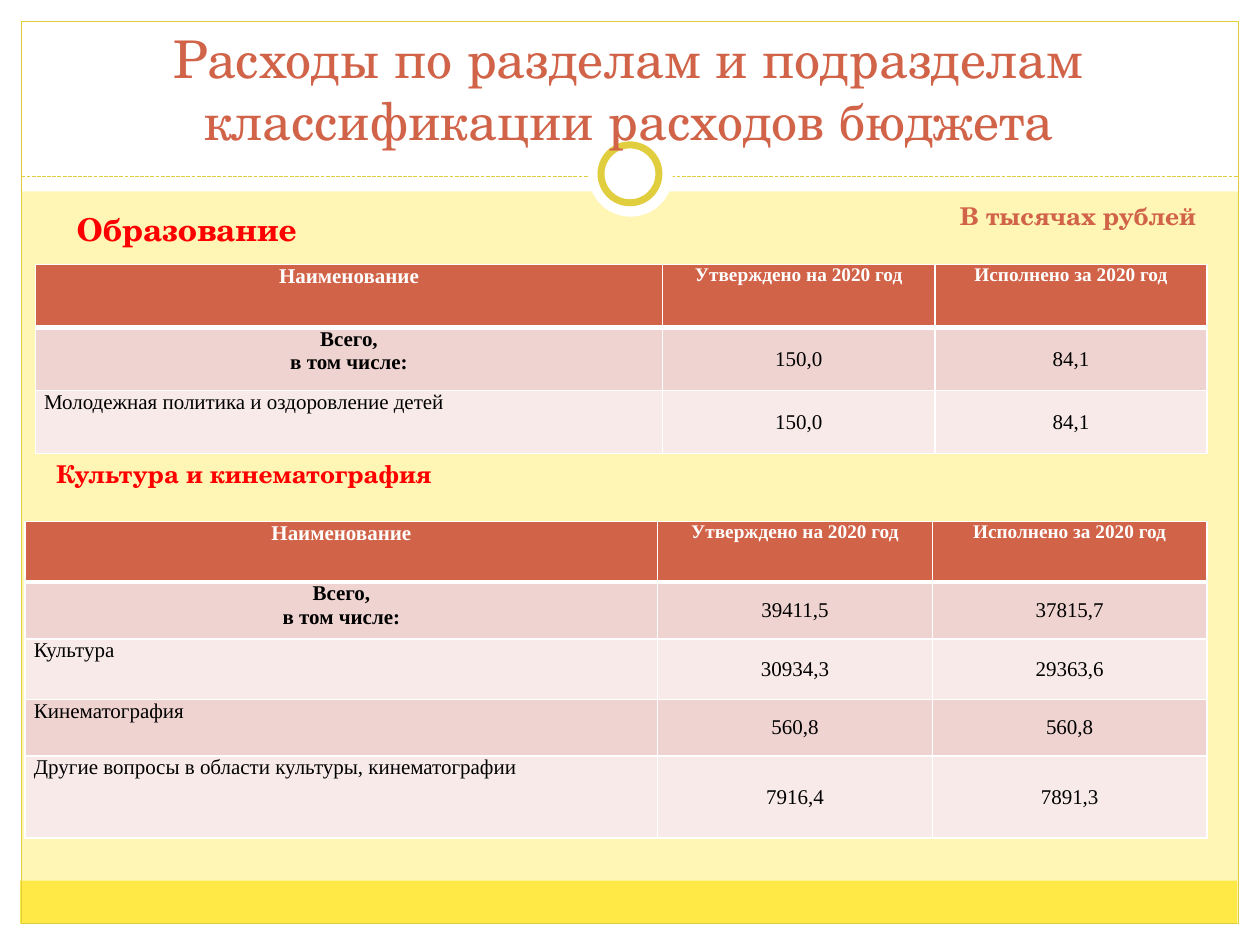
from pptx import Presentation
from pptx.dml.color import RGBColor
from pptx.enum.dml import MSO_LINE
from pptx.enum.shapes import MSO_CONNECTOR, MSO_SHAPE
from pptx.enum.text import MSO_ANCHOR, MSO_AUTO_SIZE, PP_ALIGN
from pptx.oxml.ns import qn
from pptx.util import Inches, Pt
from lxml.etree import SubElement

HUES = {
    "page": "FFF6B5", "white": "FFFFFF", "band": "FFE947", "gold": "E1CE3F",
    "rust": "D16349", "red": "FF0000", "black": "000000",
    "pink": "EED3D0", "pale": "F7EAE9",
}
SERIF, BODY = "TeX Gyre Schola", "Times New Roman"
TITLE = "Расходы по разделам и подразделам классификации расходов бюджета"
HEAD = ("Наименование", "Утверждено на 2020 год", "Исполнено за 2020 год")
TOTAL = "Всего,\nв том числе:"

PANELS = [
    ((0, 7.33, 10, 0.17), "RECTANGLE", "white", None),
    ((0, 0, 10, 1.52), "RECTANGLE", "white", None),
    ((0, 0, 0.17, 7.5), "RECTANGLE", "white", None),
    ((9.83, 0, 0.17, 7.5), "RECTANGLE", "white", None),
    ((0.16, 6.99, 9.66, 0.34), "RECTANGLE", "band", None),
    ((0.17, 0.17, 9.66, 7.16), "RECTANGLE", None, 0.75),
]
RINGS = [
    ((4.67, 1.05, 0.67, 0.67), "OVAL", "white", None),
    ((4.77, 1.15, 0.46, 0.46), "OVAL", "white", 4),
]
LABELS = [
    ("Образование", (0.51, 1.62, 1.99, 0.4), 18, "red", False),
    ("В тысячах рублей", (7.52, 1.55, 2.27, 0.47), 14, "rust", True),
    ("Культура и кинематография", (0.35, 3.59, 3.23, 0.34), 14, "red", False),
]
TABLES = [
    {
        "at": (0.28, 2.1), "cols": (4.98, 2.16, 2.16), "rows": (0.5, 0.5, 0.5),
        "data": [
            (TOTAL, "150,0", "84,1"),
            ("Молодежная политика и оздоровление детей", "150,0", "84,1"),
        ],
    },
    {
        "at": (0.2, 4.14), "cols": (5.02, 2.18, 2.18),
        "rows": (0.48, 0.45, 0.48, 0.45, 0.65),
        "data": [
            (TOTAL, "39411,5", "37815,7"),
            ("Культура", "30934,3", "29363,6"),
            ("Кинематография", "560,8", "560,8"),
            ("Другие вопросы в области культуры, кинематографии", "7916,4", "7891,3"),
        ],
    },
]


def tint(name):
    return RGBColor.from_string(HUES[name])


def put(item, vals):
    for key, val in vals.items():
        setattr(item, key, val)


def paint(fill, name):
    if name:
        fill.solid()
        fill.fore_color.rgb = tint(name)
    else:
        fill.background()


def write(frame, text, size, hue, face, bold, align):
    frame.text = text
    for para in frame.paragraphs:
        para.alignment = align
        put(para.font, {"size": Pt(size), "name": face, "bold": bold})
        para.font.color.rgb = tint(hue)


def draw(slide, parts):
    for box, kind, hue, width in parts:
        shape = slide.shapes.add_shape(getattr(MSO_SHAPE, kind), *map(Inches, box))
        shape.shadow.inherit = False
        paint(shape.fill, hue)
        paint(shape.line.fill, width and "gold")
        if width:
            shape.line.width = Pt(width)


def rule(slide):
    ends = map(Inches, (0.17, 1.4, 9.83, 1.4))
    line = slide.shapes.add_connector(MSO_CONNECTOR.STRAIGHT, *ends)
    paint(line.line.fill, "gold")
    put(line.line, {"width": Pt(0.75), "dash_style": MSO_LINE.SQUARE_DOT})
    SubElement(line._element.spPr, qn("a:effectLst"))


def edge(cell, row):
    props = cell._tc.get_or_add_tcPr()
    thick = {"T": 3 if row == 1 else 1, "B": 3 if row == 0 else 1}
    for side in "LRTB":
        line = SubElement(props, qn(f"a:ln{side}"), w=str(Pt(thick.get(side, 1))))
        fill = SubElement(line, qn("a:solidFill"))
        SubElement(fill, qn("a:srgbClr"), val=HUES["white"])


def style(cell, text, row, col):
    head, total = row == 0, text == TOTAL
    edge(cell, row)
    paint(cell.fill, "rust" if head else ("pale", "pink")[row % 2])
    put(cell, {
        "margin_left": Inches(0.07), "margin_right": Inches(0.07),
        "margin_top": 0, "margin_bottom": 0,
        "vertical_anchor": MSO_ANCHOR.MIDDLE if col and not head else MSO_ANCHOR.TOP,
    })
    size = 11 if head and col else 12
    align = PP_ALIGN.CENTER if head or total or col else PP_ALIGN.JUSTIFY
    write(cell.text_frame, text, size, "white" if head else "black",
          BODY, head or total, align)


def grid(slide, at, cols, rows, data):
    box = map(Inches, (*at, sum(cols), sum(rows)))
    table = slide.shapes.add_table(len(rows), len(cols), *box).table
    for col, width in zip(table.columns, cols):
        col.width = Inches(width)
    for row, height in zip(table.rows, rows):
        row.height = Inches(height)
    for r, vals in enumerate([HEAD, *data]):
        for c, text in enumerate(vals):
            style(table.cell(r, c), text, r, c)


def main():
    deck = Presentation()
    put(deck, {"slide_width": Inches(10), "slide_height": Inches(7.5)})
    slide = deck.slides.add_slide(deck.slide_layouts[5])
    paint(slide.background.fill, "page")
    draw(slide, PANELS)
    rule(slide)
    draw(slide, RINGS)
    for text, box, size, hue, wrap in LABELS:
        frame = slide.shapes.add_textbox(*map(Inches, box)).text_frame
        fit = MSO_AUTO_SIZE.NONE if wrap else MSO_AUTO_SIZE.SHAPE_TO_FIT_TEXT
        put(frame, {"word_wrap": wrap, "auto_size": fit})
        write(frame, text, size, hue, SERIF, True, PP_ALIGN.LEFT)
    for spec in TABLES:
        grid(slide, **spec)
    title = slide.shapes.title
    sides = ("left", "top", "width", "height")
    put(title, dict(zip(sides, map(Inches, (0.33, 0.42, 9.33, 0.83)))))
    put(title.text_frame, {
        "word_wrap": True, "auto_size": MSO_AUTO_SIZE.NONE,
        "vertical_anchor": MSO_ANCHOR.BOTTOM,
    })
    write(title.text_frame, TITLE, 29.7, "rust", SERIF, False, PP_ALIGN.CENTER)
    slide.shapes._spTree.append(title._element)
    deck.save("out.pptx")


if __name__ == "__main__":
    main()
